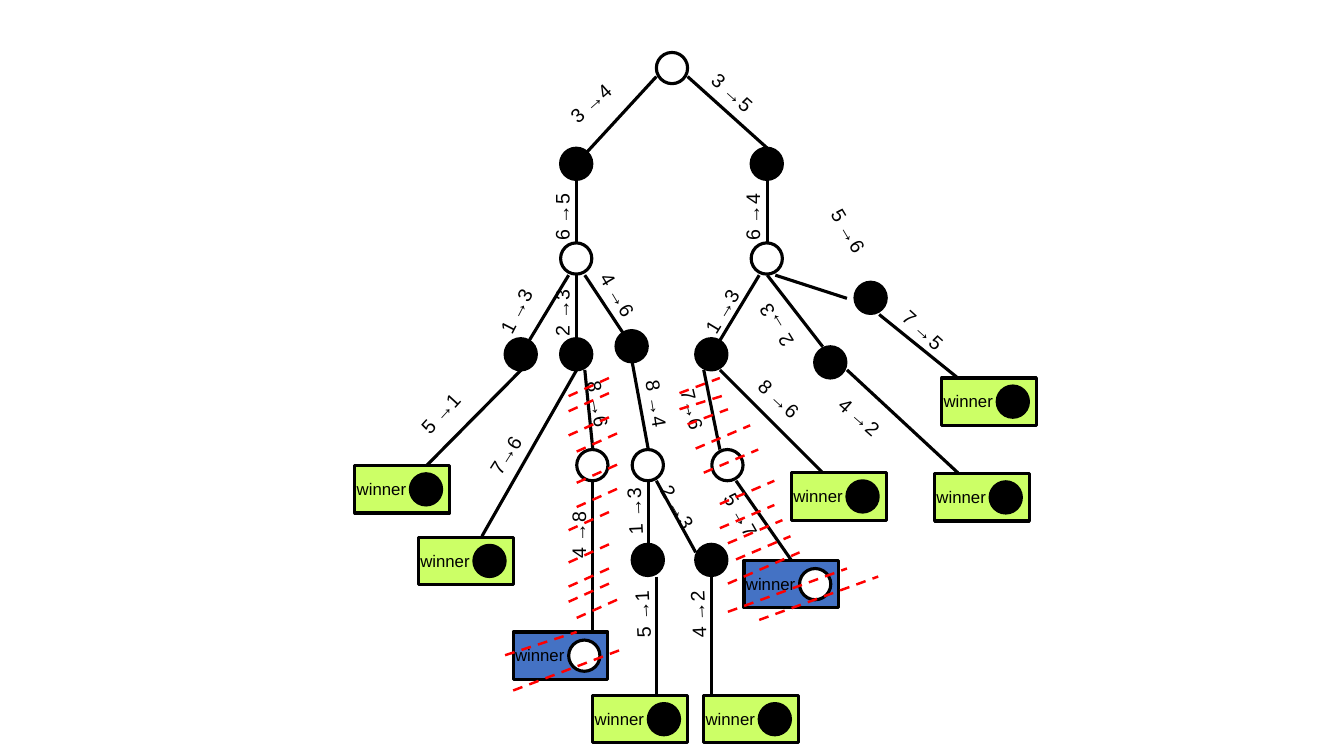
from dataclasses import dataclass

from lxml.etree import SubElement
from pptx import Presentation
from pptx.dml.color import RGBColor
from pptx.enum.dml import MSO_LINE
from pptx.enum.shapes import MSO_CONNECTOR, MSO_SHAPE
from pptx.enum.text import MSO_AUTO_SIZE
from pptx.oxml.ns import qn
from pptx.util import Emu, Pt

PX = 9144  # one px is a hundredth of an inch
DISC = 31
BOX_W, BOX_H = 94, 47
HEX = {"ink": "000000", "white": "FFFFFF", "lime": "CCFF66",
       "blue": "4472C4", "red": "FF0000"}
EDGE = {"width": Pt(2.25)}
DASH = {"width": Pt(1.75), "dash_style": MSO_LINE.DASH}
FRAME = {"word_wrap": True, "auto_size": MSO_AUTO_SIZE.SHAPE_TO_FIT_TEXT}


@dataclass
class Row:
    """Discs of one fill at one height."""
    fill: str
    top: int
    lefts: tuple[int, ...]


@dataclass
class Move:
    """A turned label beside an edge."""
    text: str
    left: int
    top: int
    turn: float
    width: int = 94


@dataclass
class Win:
    """A boxed end state with the disc of its winner."""
    left: int
    top: int
    fill: str = "lime"
    disc: str = "ink"


@dataclass
class Sweep:
    """Red strokes that share one run and rise."""
    run: int
    rise: int
    starts: tuple[tuple[int, int], ...]


ROWS = [
    Row("white", 52, (651,)),
    Row("ink", 147, (556, 745)),
    Row("white", 241, (556, 745)),
    Row("ink", 280, (848,)),
    Row("ink", 328, (611,)),
    Row("ink", 336, (501, 556, 690)),
    Row("ink", 344, (808,)),
    Row("white", 446, (572, 627, 706)),
    Row("ink", 540, (627, 690)),
]

# Each edge: from x, y to x, y
EDGES = [
    (651, 76, 572, 162), (682, 76, 761, 147),
    (572, 178, 572, 241), (761, 178, 761, 241),
    (564, 273, 517, 351), (572, 273, 572, 344), (580, 273, 627, 344),
    (753, 273, 706, 351), (761, 273, 816, 344), (769, 273, 840, 296),
    (517, 367, 423, 462), (572, 367, 478, 532), (580, 367, 588, 446),
    (627, 359, 643, 446), (698, 367, 714, 446), (714, 367, 816, 469),
    (840, 367, 950, 469), (872, 312, 950, 375),
    (588, 477, 588, 627), (643, 477, 643, 548), (651, 477, 690, 548),
    (730, 477, 785, 556), (651, 572, 651, 690), (706, 572, 706, 690),
]

MOVES = [
    Move("3 →4", 549, 76, 318.5), Move("3 →5", 690, 84, 41.9),
    Move("6 →5", 510, 185, 270), Move("6 →4", 699, 185, 270),
    Move("1 →3", 471, 280, 297.1), Move("2 →3", 510, 280, 270),
    Move("4 →6", 573, 288, 59.4), Move("5 →6", 802, 224, 59.4),
    Move("4 →2", 816, 406, 41.4), Move("1 →3", 676, 280, 301.1),
    Move("2 →3", 715, 295, 238.6), Move("5 →1", 399, 383, 312.4),
    Move("5 →1", 589, 579, 267), Move("7→6", 463, 421, 302.3),
    Move("7→6", 644, 406, 76.5), Move("8 →6", 549, 398, 80.3),
    Move("8 →6", 738, 383, 43, 79), Move("8 →4", 613, 390, 80.9, 79),
    Move("5 →7", 699, 500, 60.4, 79), Move("2 →3", 636, 492, 60.4, 79),
    Move("4 →2", 652, 587, 267.3, 79), Move("1 →3", 589, 484, 267.3, 79),
    Move("4 →8", 534, 508, 270, 79), Move("7 →5", 879, 320, 42),
]

WINS = [
    Win(352, 462), Win(415, 533), Win(509, 627, "blue", "white"),
    Win(934, 375), Win(927, 470), Win(785, 469),
    Win(738, 556, "blue", "white"), Win(698, 690), Win(588, 690),
]

# One list of sweeps for each branch that is struck out
CUTS = [
    [
        Sweep(111, -42, ((509, 685),)),
        Sweep(71, -23, ((501, 650),)),
        Sweep(40, -18, ((564, 597), (572, 613), (564, 582), (564, 558),
                        (564, 526), (572, 479), (572, 503), (572, 448),
                        (564, 432), (564, 408), (564, 393))),
    ],
    [
        Sweep(118, -43, ((722, 607), (753, 615))),
        Sweep(71, -31, ((722, 579),)),
        Sweep(54, -23, ((730, 555), (722, 539), (714, 524),
                        (714, 500), (698, 469), (690, 445))),
        Sweep(48, -15, ((674, 406),)),
        Sweep(40, -15, ((682, 421), (674, 390))),
    ],
]


def px(*sizes: float) -> list[Emu]:
    return [Emu(round(size * PX)) for size in sizes]


def paint(name: str) -> RGBColor:
    return RGBColor.from_string(HEX[name])


def apply(target: object, values: dict) -> None:
    for key, value in values.items():
        setattr(target, key, value)


def draw_line(shapes, ends: tuple[int, ...], tint: str, style: dict) -> None:
    line = shapes.add_connector(MSO_CONNECTOR.STRAIGHT, *px(*ends))
    line.line.color.rgb = paint(tint)
    apply(line.line, style)
    SubElement(line._element.spPr, qn("a:effectLst"))


def draw_shape(shapes, kind: MSO_SHAPE, area: tuple[int, ...], fill: str) -> None:
    shape = shapes.add_shape(kind, *px(*area))
    shape.shadow.inherit = False
    shape.fill.solid()
    shape.fill.fore_color.rgb = paint(fill)
    shape.line.color.rgb = paint("ink")
    apply(shape.line, EDGE)


def draw_disc(shapes, left: int, top: int, fill: str) -> None:
    draw_shape(shapes, MSO_SHAPE.OVAL, (left, top, DISC, DISC), fill)


def draw_text(shapes, text: str, area: tuple[int, ...], size: int,
              turn: float = 0) -> None:
    box = shapes.add_textbox(*px(*area))
    box.rotation = turn
    apply(box.text_frame, FRAME)
    run = box.text_frame.paragraphs[0].add_run()
    run.text = text
    apply(run.font, {"name": "Arial", "size": Pt(size)})
    run.font.color.rgb = paint("ink")


def draw_win(shapes, win: Win) -> None:
    draw_shape(shapes, MSO_SHAPE.RECTANGLE,
               (win.left, win.top, BOX_W, BOX_H), win.fill)
    draw_text(shapes, "winner", (win.left - 8, win.top + 8, 87, 30), 12)
    draw_disc(shapes, win.left + 55, win.top + 8, win.disc)


def main() -> None:
    deck = Presentation()
    deck.slide_width, deck.slide_height = px(1333, 750)
    shapes = deck.slides.add_slide(deck.slide_layouts[6]).shapes

    # Tree: edges below discs
    for ends in EDGES:
        draw_line(shapes, ends, "ink", EDGE)
    for row in ROWS:
        for left in row.lefts:
            draw_disc(shapes, left, row.top, row.fill)

    # Moves and end states
    for move in MOVES:
        draw_text(shapes, move.text, (move.left, move.top, move.width, 33),
                  14, move.turn)
    for win in WINS:
        draw_win(shapes, win)

    # Struck-out branches
    for cut in CUTS:
        group = shapes.add_group_shape()
        for sweep in cut:
            for x, y in sweep.starts:
                draw_line(group.shapes, (x, y, x + sweep.run, y + sweep.rise),
                          "red", DASH)

    deck.save("out.pptx")


if __name__ == "__main__":
    main()
